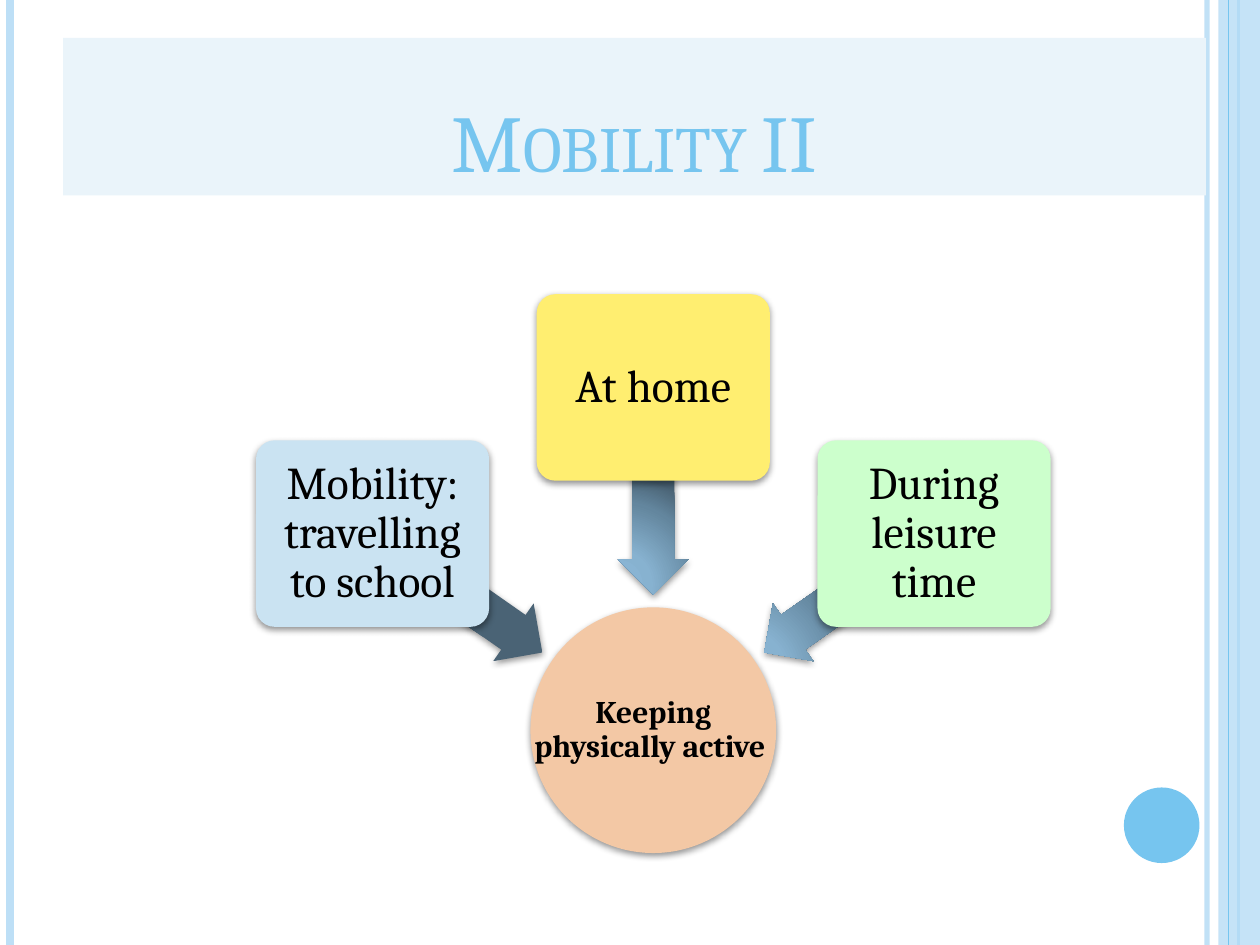
import math
from lxml import etree
from pptx import Presentation, util as u
from pptx.dml.color import RGBColor
from pptx.enum import shapes, text
from pptx.oxml import parse_xml
from pptx.oxml.ns import qn

WIDE, HIGH = 10, 7.5
NS = 'xmlns:a="http://schemas.openxmlformats.org/drawingml/2006/main"'
HUE = {"pale": "BDDFF6", "sky": "76C5EF", "band": "EAF4FA", "hub": "F3C8A5",
       "blue": "CAE3F2", "gold": "FFEE70", "mint": "CCFFCC", "ink": "000000"}
TITLE = "Mobility II"
HUB = "Keeping physically active "
# label, colour, direction from the hub in degrees
BOXES = [("Mobility: travelling to school", "blue", 215),
         ("At home", "gold", 270),
         ("During leisure time", "mint", 325)]
# x, colour, width in points, opacity in percent
RULES = [(9.58, "pale", 3, 93), (0.08, "pale", 4.5, 100),
         (9.83, "sky", 1.5, 100), (9.75, "sky", 0.75, 100)]
STOPS = [(0, "8CB9D8"), (30, "87B2D0"), (75, "63869E"), (100, "4A6375")]
MID = (5.185, 5.795)
HUB_SIZE, BOX_SIZE, ARROW_SIZE = (1.95, 1.95), (1.85, 1.48), (1.65, 0.56)
BOX_FAR, ARROW_FAR = 2.72, 1.9
KIND = shapes.MSO_SHAPE


def rgb(name):
    return RGBColor.from_string(HUE[name])


def fade(fill, percent):
    """Set the opacity of a solid fill."""
    color = fill._xPr.find(qn("a:solidFill"))[0]
    etree.SubElement(color, qn("a:alpha")).set("val", str(percent * 1000))


def frame(mid, size):
    """Inches for left, top, width, height around a centre."""
    return [u.Inches(v) for v in (mid[0] - size[0] / 2, mid[1] - size[1] / 2, *size)]


def ray(angle, far):
    turn = math.radians(angle)
    return MID[0] + far * math.cos(turn), MID[1] + far * math.sin(turn)


def draw(kind, mid, size, color=None, shade=True):
    shape = slide.shapes.add_shape(kind, *frame(mid, size))
    shape.line.fill.background()
    if color:
        shape.fill.solid()
        shape.fill.fore_color.rgb = rgb(color)
    shape.shadow.inherit = False
    if shade:
        shape._element.spPr.find(qn("a:effectLst")).append(parse_xml(
            f'<a:outerShdw {NS} blurRad="50800" dist="20000" dir="5400000" rotWithShape="0">'
            '<a:srgbClr val="000000"><a:alpha val="42000"/></a:srgbClr></a:outerShdw>'))
    return shape


def write(shape, words, size, color, inset, anchor="MIDDLE", space=0.9, bold=False):
    body = shape.text_frame
    look = {"word_wrap": True, "auto_size": text.MSO_AUTO_SIZE.NONE,
            "vertical_anchor": text.MSO_ANCHOR[anchor]}
    look.update({f"margin_{side}": u.Inches(inset)
                 for side in ("left", "right", "top", "bottom")})
    for key, value in look.items():
        setattr(body, key, value)
    para = body.paragraphs[0]
    para.alignment, para.line_spacing = text.PP_ALIGN.CENTER, space
    run = para.add_run()
    run.text = words
    for key, value in {"name": "Cambria", "size": u.Pt(size), "bold": bold}.items():
        setattr(run.font, key, value)
    run.font.color.rgb = rgb(color)
    return run


def border():
    for x, color, width, solid in RULES:
        rule = slide.shapes.add_connector(
            shapes.MSO_CONNECTOR.STRAIGHT, u.Inches(x), 0, u.Inches(x), u.Inches(HIGH))
        rule.line.color.rgb = rgb(color)
        rule.line.width = u.Pt(width)
        if solid < 100:
            fade(rule.line.fill, solid)
        etree.SubElement(rule._element.spPr, qn("a:effectLst"))
        if x == 9.83:
            strip = draw(KIND.RECTANGLE, (WIDE - 0.165, HIGH / 2), (0.33, HIGH), "pale", False)
            fade(strip.fill, 87)
    draw(KIND.OVAL, (9.22, 6.55), (0.6, 0.6), "sky", False)


def heading():
    title = slide.shapes.title
    slide.shapes._spTree.append(title._element)
    spots = zip(("left", "top", "width", "height"), (0.5, 0.3, 9.07, 1.25))
    for key, value in spots:
        setattr(title, key, u.Inches(value))
    title.fill.solid()
    title.fill.fore_color.rgb = rgb("band")
    run = write(title, TITLE, 46, "sky", 0.05, "BOTTOM", 1)
    run.font._element.set("cap", "small")


def arrow(angle):
    shape = draw(KIND.LEFT_ARROW, ray(angle, ARROW_FAR), ARROW_SIZE)
    shape.rotation = angle
    shape.adjustments[0], shape.adjustments[1] = 0.6, 0.5
    stops = "".join(f'<a:gs pos="{at * 1000}"><a:srgbClr val="{color}"/></a:gs>'
                    for at, color in STOPS)
    shape._element.spPr.insert(2, parse_xml(
        f'<a:gradFill {NS} rotWithShape="1"><a:gsLst>{stops}</a:gsLst><a:path path="circle">'
        '<a:fillToRect l="5000" t="100000" r="120000" b="10000"/></a:path></a:gradFill>'))


def diagram():
    draw(KIND.OVAL, MID, HUB_SIZE, "hub")
    label = slide.shapes.add_textbox(*frame(MID, HUB_SIZE))
    write(label, HUB, 18, "ink", 0.01, bold=True)
    for words, color, angle in BOXES:
        arrow(angle)
        box = draw(KIND.ROUNDED_RECTANGLE, ray(angle, BOX_FAR), BOX_SIZE, color)
        box.adjustments[0] = 0.1
        write(box, words, 26, "ink", 0.01)


deck = Presentation()
deck.slide_width, deck.slide_height = u.Inches(WIDE), u.Inches(HIGH)
slide = deck.slides.add_slide(deck.slide_layouts[5])
border()
heading()
diagram()
deck.save("out.pptx")
